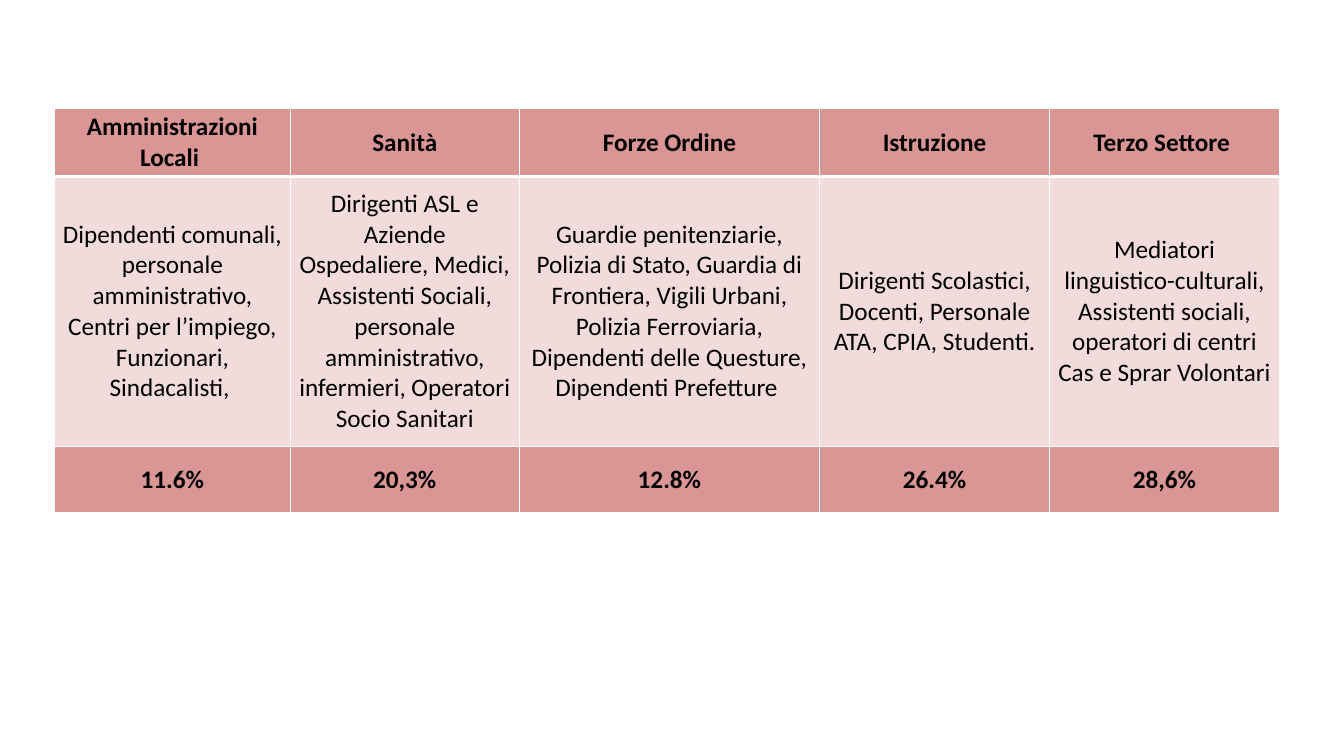
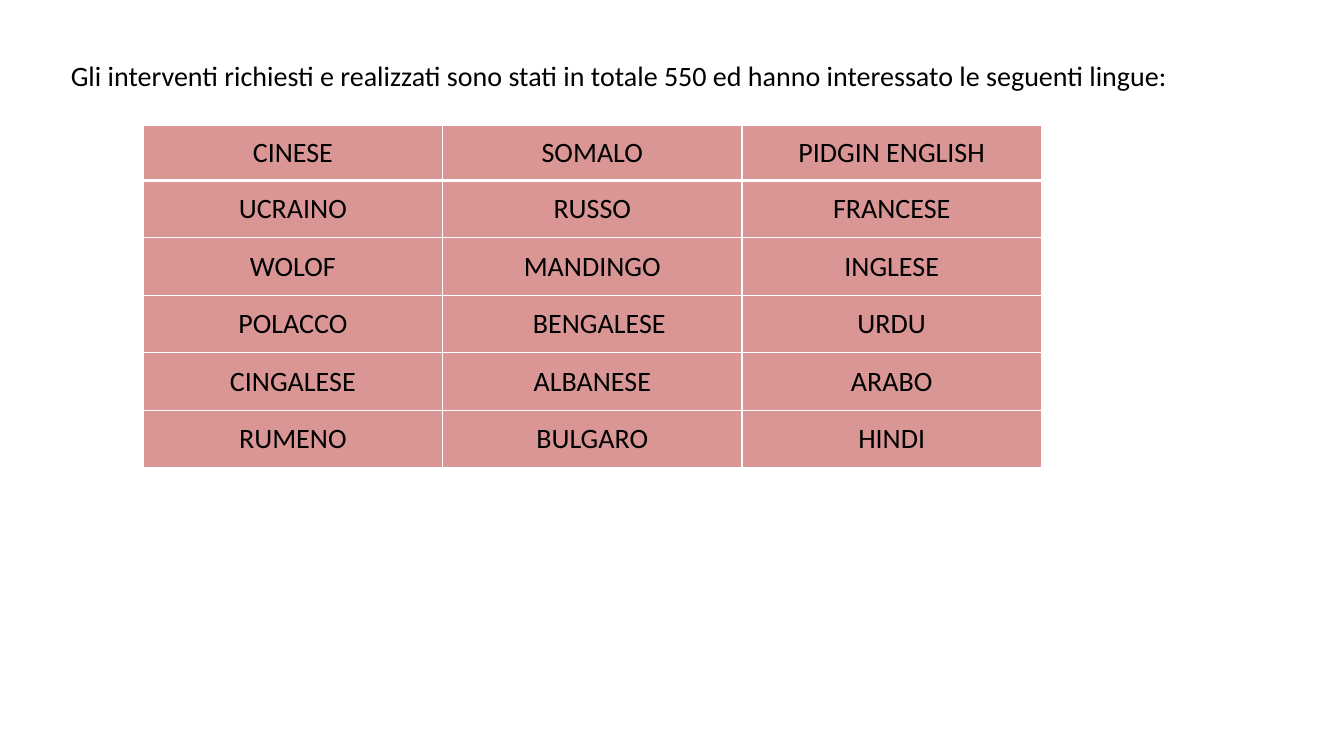
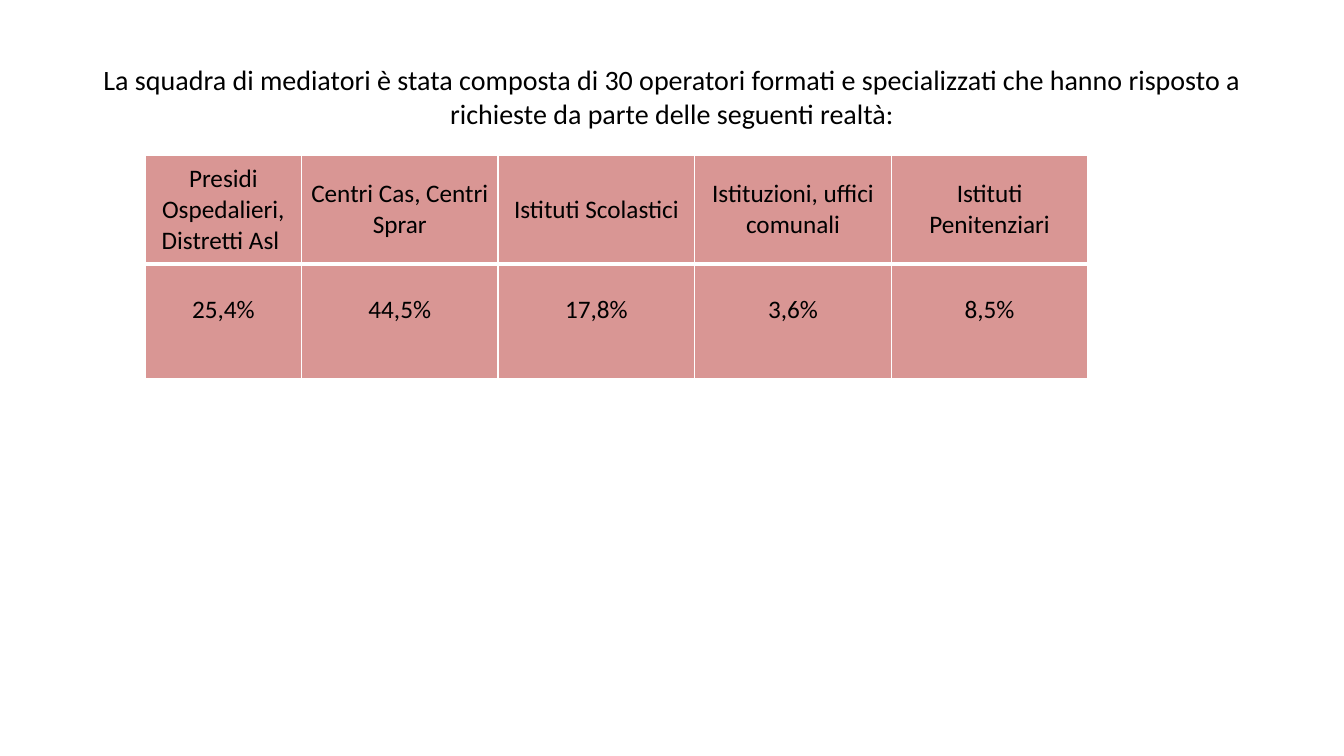
import lxml.etree
import pptx
import pptx.dml.color
import pptx.enum.text
import pptx.oxml.ns
import pptx.util

WIDE, HIGH = 13.33, 7.5
FONT = "Calibri"
BLACK = pptx.dml.color.RGBColor(0x00, 0x00, 0x00)
WHITE = pptx.dml.color.RGBColor(0xFF, 0xFF, 0xFF)
ROSE = pptx.dml.color.RGBColor(0xD9, 0x96, 0x94)
PALE = pptx.dml.color.RGBColor(0xF2, 0xDC, 0xDB)
THIN, THICK = 1, 3
SIDE = 0.07
TITLE_ONLY, BLANK = 5, 6

CENTER = pptx.enum.text.PP_ALIGN.CENTER
TOP = pptx.enum.text.MSO_ANCHOR.TOP
MIDDLE = pptx.enum.text.MSO_ANCHOR.MIDDLE
inch = pptx.util.Inches

SECTORS = [
    ["Amministrazioni Locali ", "Sanità", "Forze Ordine", "Istruzione",
     "Terzo Settore "],
    ["Dipendenti comunali, personale amministrativo, Centri per l’impiego, "
     "Funzionari, Sindacalisti, ",
     "Dirigenti ASL e Aziende Ospedaliere, Medici, Assistenti Sociali, "
     "personale amministrativo, infermieri, Operatori Socio Sanitari",
     "Guardie penitenziarie, Polizia di Stato, Guardia di Frontiera, "
     "Vigili Urbani, Polizia Ferroviaria, Dipendenti delle Questure, "
     "Dipendenti Prefetture ",
     "Dirigenti Scolastici, Docenti, Personale ATA, CPIA, Studenti.",
     "Mediatori linguistico-culturali, Assistenti sociali, operatori di "
     "centri Cas e Sprar Volontari"],
    ["11.6%", "20,3%", "12.8%", "26.4%", "28,6%"],
]
TONGUES = [
    ["CINESE", "SOMALO", "PIDGIN ENGLISH"],
    ["UCRAINO", "RUSSO", "FRANCESE"],
    ["WOLOF", "MANDINGO", "INGLESE"],
    ["POLACCO", "BENGALESE", "URDU"],
    ["CINGALESE", "ALBANESE", "ARABO"],
    ["RUMENO", "BULGARO", "HINDI"],
]
CLIENTS = [
    ["Presidi Ospedalieri, Distretti Asl ", "Centri Cas, Centri Sprar",
     "Istituti Scolastici", "Istituzioni, uffici comunali",
     "Istituti Penitenziari"],
    ["25,4%", "44,5%", "17,8%", "3,6%", "8,5%"],
]


def write(frame, text, size, bold=False):
    para = frame.paragraphs[0]
    para.alignment = CENTER
    run = para.add_run()
    run.text = text
    run.font.name = FONT
    run.font.size = pptx.util.Pt(size)
    run.font.bold = bold
    run.font.color.rgb = BLACK
    return para


def edge(cell, side, width):
    """Draw one white border; call before the cell gets its fill."""
    name = pptx.oxml.ns.qn
    line = lxml.etree.SubElement(cell._tc.get_or_add_tcPr(), name("a:ln" + side),
                                 w=str(pptx.util.Pt(width)))
    fill = lxml.etree.SubElement(line, name("a:solidFill"))
    lxml.etree.SubElement(fill, name("a:srgbClr"), val=str(WHITE))


def add_title(slide, text, left, top, wide, high, space=1.0):
    title = slide.shapes.title
    title.left, title.top = inch(left), inch(top)
    title.width, title.height = inch(wide), inch(high)
    frame = title.text_frame
    frame.word_wrap = True
    frame.auto_size = pptx.enum.text.MSO_AUTO_SIZE.NONE
    frame.vertical_anchor = TOP
    write(frame, text, 20).line_spacing = space


def add_grid(slide, left, top, cols, rows, texts, size, strong=(), pale=()):
    """Add a table; strong and pale hold the numbers of bold and light rows."""
    grid = slide.shapes.add_table(len(rows), len(cols), inch(left), inch(top),
                                  inch(sum(cols)), inch(sum(rows))).table
    grid.first_row = grid.horz_banding = False
    for col, wide in zip(grid.columns, cols):
        col.width = inch(wide)
    for r, (row, high) in enumerate(zip(grid.rows, rows)):
        row.height = inch(high)
        for cell, text in zip(row.cells, texts[r]):
            cell.margin_left = cell.margin_right = inch(SIDE)
            cell.margin_top = cell.margin_bottom = 0
            cell.vertical_anchor = MIDDLE
            edge(cell, "L", THIN)
            edge(cell, "R", THIN)
            edge(cell, "T", THICK if r == 1 else THIN)
            edge(cell, "B", THICK if r == 0 else THIN)
            cell.fill.solid()
            cell.fill.fore_color.rgb = PALE if r in pale else ROSE
            write(cell.text_frame, text, size, r in strong)
    return grid


def main():
    deck = pptx.Presentation()
    deck.slide_width, deck.slide_height = inch(WIDE), inch(HIGH)
    slides, forms = deck.slides, deck.slide_layouts

    slide = slides.add_slide(forms[BLANK])
    add_grid(slide, 0.54, 1.08, [2.34, 2.27, 2.98, 2.28, 2.28],
             [0.67, 2.68, 0.66], SECTORS, 18, strong=(0, 2), pale=(1,))

    slide = slides.add_slide(forms[TITLE_ONLY])
    add_title(slide, "Gli interventi richiesti e realizzati sono stati in "
              "totale 550 ed hanno interessato le seguenti lingue:",
              0, 0.48, 12.28, 0.85, 1.15)
    grid = add_grid(slide, 1.42, 1.24, [2.97] * 3, [0.55] + [0.57] * 5,
                    TONGUES, 20)
    grid.cell(3, 1).margin_left = inch(3 * SIDE)

    slide = slides.add_slide(forms[TITLE_ONLY])
    add_title(slide, "La squadra di mediatori è stata composta di 30 operatori "
              "formati e specializzati che hanno risposto a richieste da parte "
              "delle seguenti realtà:", 0.51, 0.57, 12.31, 0.78)
    grid = add_grid(slide, 1.44, 1.54, [1.55] + [1.95] * 4, [1.08, 1.14],
                    CLIENTS, 18)
    for cell in grid.rows[1].cells:
        cell.vertical_anchor = TOP
        cell.margin_top = inch(0.3)

    deck.save("out.pptx")


if __name__ == "__main__":
    main()
